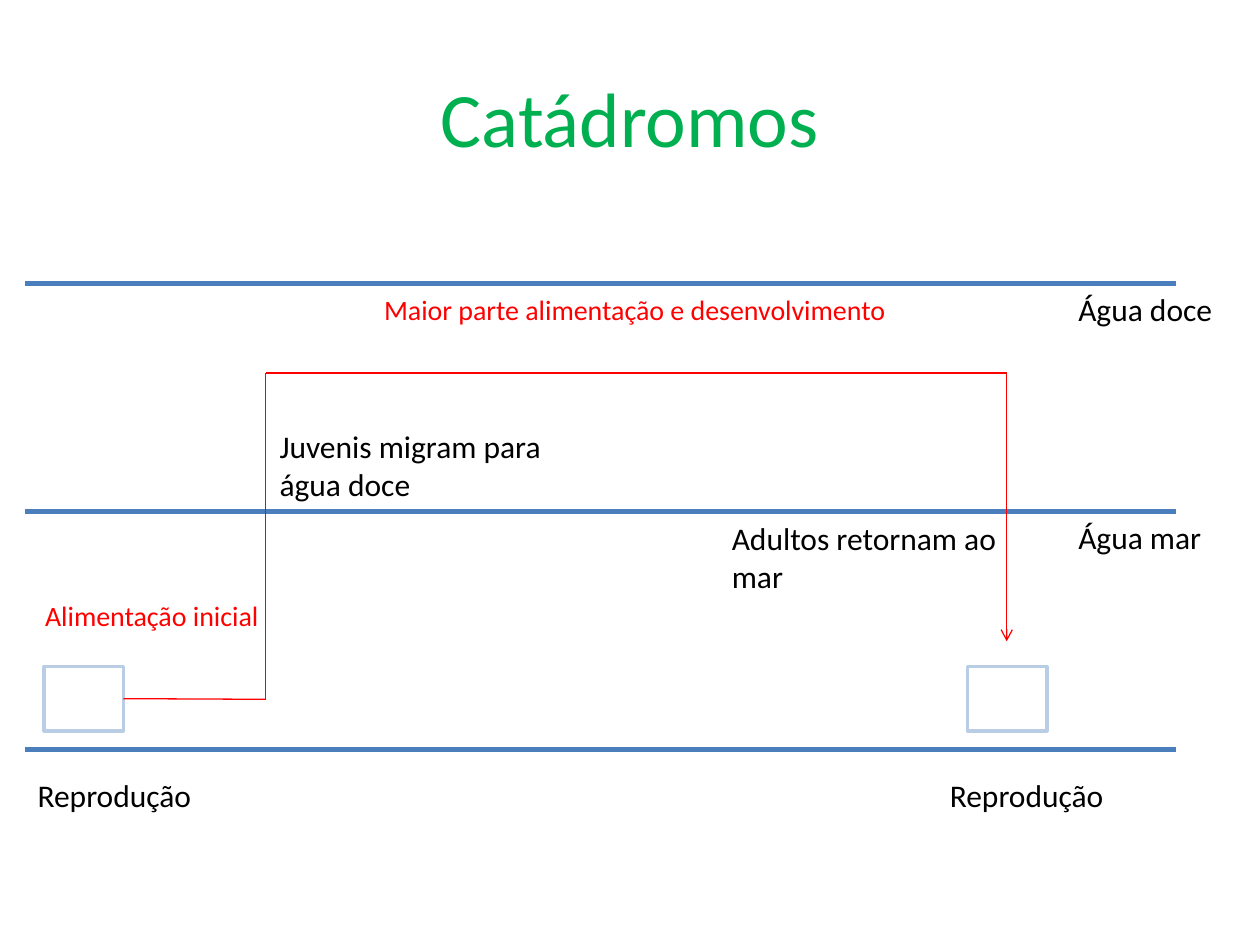
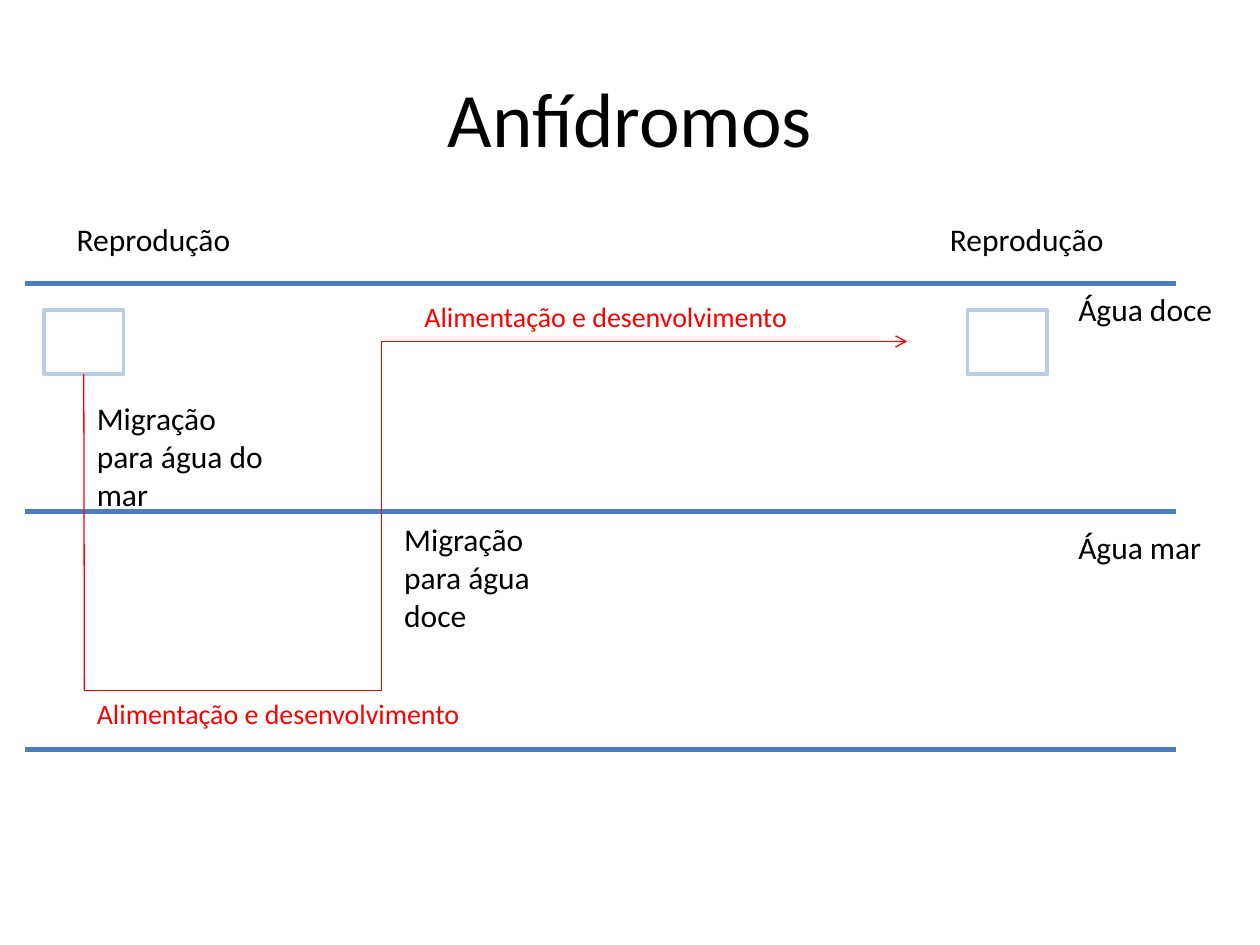
from itertools import pairwise

from lxml import etree
from pptx import Presentation
from pptx.dml.color import RGBColor
from pptx.enum.shapes import MSO_CONNECTOR as CONNECTOR, MSO_SHAPE as SHAPE
from pptx.enum.text import MSO_ANCHOR as ANCHOR, PP_ALIGN as ALIGN
from pptx.oxml.ns import qn
from pptx.util import Inches, Pt

FONT = "Calibri"
BLACK, GREEN, RED = "000000", "00B050", "FF0000"
WATER_BLUE, BOX_BLUE = "4B7EBC", "B9CDE5"

WATER_LEFT, WATER_RIGHT = 0.2, 9.33
WATER_LEVELS = (2.25, 4.06, 5.95)
BOX_LEFTS = (0.35, 7.68)
BOX_SIZE = (0.63, 0.51)
BOTTOM, RIGHT = 2, 3

# notes (black, 18 pt) and feeding (red, 16 pt): text, left, top, width, height
# route: corner points, starting at route_side of the first box
CYCLES = [
    {
        "title": "Catádromos", "title_color": GREEN,
        "box_top": 5.29, "route_side": RIGHT,
        "route": [(0.98, 5.54), (2.11, 5.55), (2.11, 2.96), (7.99, 2.96), (7.99, 5.09)],
        "notes": [
            ("Água doce", 8.46, 2.25, 1.54, 0.4),
            ("Água mar", 8.46, 4.06, 1.54, 0.4),
            ("Reprodução", 0.2, 6.11, 2.44, 0.4),
            ("Reprodução", 7.44, 6.11, 2.44, 0.4),
            ("Juvenis migram para água doce", 2.12, 3.34, 2.81, 0.71),
            ("Adultos retornam ao mar", 5.71, 4.07, 2.66, 0.71),
        ],
        "feeding": [
            ("Maior parte alimentação e desenvolvimento", 2.95, 2.27, 5.04, 0.37),
            ("Alimentação inicial", 0.26, 4.7, 2.87, 0.37),
        ],
    },
    {
        "title": "Anfídromos", "title_color": BLACK,
        "box_top": 2.46, "route_side": BOTTOM,
        "route": [(0.67, 2.96), (0.67, 5.48), (3.03, 5.48), (3.03, 2.71), (7.2, 2.71)],
        "notes": [
            ("Água doce", 8.46, 2.25, 1.54, 0.4),
            ("Água mar", 8.46, 4.14, 1.54, 0.4),
            ("Reprodução", 0.51, 1.7, 2.52, 0.4),
            ("Reprodução", 7.44, 1.7, 2.52, 0.4),
            ("Migração para água do mar", 0.67, 3.12, 1.57, 1.01),
            ("Migração para água doce", 3.11, 4.08, 1.57, 1.01),
        ],
        "feeding": [
            ("Alimentação e desenvolvimento", 0.67, 5.48, 3.62, 0.37),
            ("Alimentação e desenvolvimento", 3.27, 2.33, 3.62, 0.37),
        ],
    },
]


def rgb(color):
    return RGBColor.from_string(color)


def add_text(s, text, left, top, width, height, size=18, color=BLACK):
    tf = s.shapes.add_textbox(*map(Inches, (left, top, width, height))).text_frame
    tf.word_wrap = True
    p = tf.paragraphs[0]
    p.text = text
    p.font.name, p.font.size = FONT, Pt(size)
    p.font.color.rgb = rgb(color)
    return tf


def add_title(s, text, color):
    tf = add_text(s, text, 0.5, 0.3, 9, 1.25, 44, color)
    tf.vertical_anchor = ANCHOR.MIDDLE
    tf.paragraphs[0].alignment = ALIGN.CENTER


def add_line(s, start, end, color, width):
    line = s.shapes.add_connector(CONNECTOR.STRAIGHT, *map(Inches, (*start, *end)))
    line.line.color.rgb = rgb(color)
    line.line.width = Pt(width)
    etree.SubElement(line._element.spPr, qn("a:effectLst"))
    return line


def add_box(s, left, top):
    sp = s.shapes.add_shape(SHAPE.RECTANGLE, *map(Inches, (left, top, *BOX_SIZE)))
    sp.shadow.inherit = False
    sp.fill.background()
    sp.line.color.rgb = rgb(BOX_BLUE)
    sp.line.width = Pt(2)
    return sp


def add_route(s, points, box, side):
    """Draw the migration route from a side of the box to an arrowhead."""
    legs = [add_line(s, a, b, RED, 0.75) for a, b in pairwise(points)]
    legs[0].begin_connect(box, side)
    etree.SubElement(legs[-1].line._get_or_add_ln(), qn("a:tailEnd"), type="arrow")


def add_cycle(prs, cycle):
    s = prs.slides.add_slide(prs.slide_layouts[6])
    add_title(s, cycle["title"], cycle["title_color"])
    for y in WATER_LEVELS:
        add_line(s, (WATER_LEFT, y), (WATER_RIGHT, y), WATER_BLUE, 3)
    boxes = [add_box(s, left, cycle["box_top"]) for left in BOX_LEFTS]
    add_route(s, cycle["route"], boxes[0], cycle["route_side"])
    for note in cycle["notes"]:
        add_text(s, *note)
    for label in cycle["feeding"]:
        add_text(s, *label, size=16, color=RED)


def main():
    prs = Presentation()
    prs.slide_width, prs.slide_height = Inches(10), Inches(7.5)
    for cycle in CYCLES:
        add_cycle(prs, cycle)
    prs.save("out.pptx")


if __name__ == "__main__":
    main()
